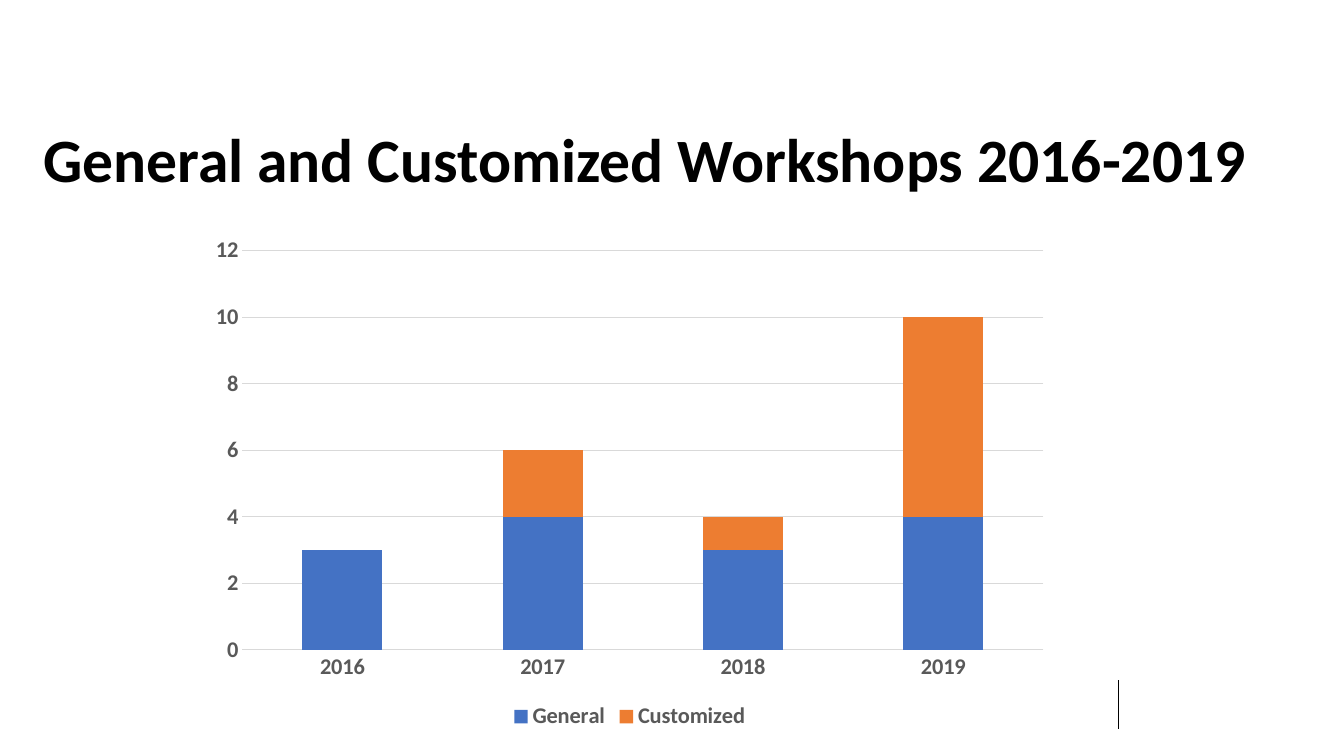
import pptx
import pptx.chart.data
import pptx.dml.color
import pptx.enum.chart
import pptx.enum.shapes
import pptx.enum.text
import pptx.oxml
import pptx.util
from pptx.util import Inches

# Content
TITLE = "General and Customized Workshops 2016-2019"
YEARS = ["2016", "2017", "2018", "2019"]
WORKSHOPS = [("General", (3, 4, 3, 4)), ("Customized", (0, 2, 1, 6))]

COLORS = {
    "background": "FFFFFF",
    "title": "000000",
    "rule": "000000",
    "labels": "595959",
    "grid": "D9D9D9",
    "General": "4472C4",
    "Customized": "ED7D31",
}
TITLE_FONT = {"name": "Calibri", "size": pptx.util.Pt(44), "bold": True}
LABEL_FONT = {"name": "Calibri", "size": pptx.util.Pt(16), "bold": True}

# Layout
TITLE_BOX = {"left": Inches(0.33), "top": Inches(1),
             "width": Inches(12.48), "height": Inches(0.99)}
CHART_BOX = [Inches(value) for value in (1.97, 2.25, 8.55, 5.04)]
RULE_ENDS = [Inches(value) for value in (11.09, 6.75, 11.09, 7.23)]


def color(name):
    return pptx.dml.color.RGBColor.from_string(COLORS[name])


def set_values(target, values):
    for name, value in values.items():
        setattr(target, name, value)


def set_font(font, values, color_name):
    set_values(font, values)
    font.color.rgb = color(color_name)


def add_rule(slide):
    rule = slide.shapes.add_connector(
        pptx.enum.shapes.MSO_CONNECTOR.STRAIGHT, *RULE_ENDS)
    rule.line.width = pptx.util.Pt(0.5)
    rule.line.color.rgb = color("rule")
    properties = rule._element.spPr
    properties.append(pptx.oxml.parse_xml(
        '<a:effectLst xmlns:a='
        '"http://schemas.openxmlformats.org/drawingml/2006/main"/>'))


def add_title(slide):
    title = slide.shapes.title
    set_values(title, TITLE_BOX)
    title.text_frame.text = TITLE
    set_values(title.text_frame, {
        "word_wrap": True,
        "auto_size": pptx.enum.text.MSO_AUTO_SIZE.NONE,
        "vertical_anchor": pptx.enum.text.MSO_ANCHOR.BOTTOM,
    })
    paragraph = title.text_frame.paragraphs[0]
    set_values(paragraph, {
        "alignment": pptx.enum.text.PP_ALIGN.LEFT,
        "line_spacing": 0.9,
    })
    set_font(paragraph.runs[0].font, TITLE_FONT, "title")


def add_workshop_chart(slide):
    data = pptx.chart.data.CategoryChartData()
    data.categories = YEARS
    for name, counts in WORKSHOPS:
        data.add_series(name, counts)
    chart = slide.shapes.add_chart(
        pptx.enum.chart.XL_CHART_TYPE.COLUMN_STACKED, *CHART_BOX, data).chart
    chart.has_title = False
    set_font(chart.font, LABEL_FONT, "labels")

    # Columns
    plot = chart.plots[0]
    set_values(plot, {"gap_width": 150, "overlap": 100,
                      "vary_by_categories": False})
    for series in plot.series:
        series.format.fill.solid()
        series.format.fill.fore_color.rgb = color(series.name)
        series.invert_if_negative = False

    # Axes
    for axis in (chart.category_axis, chart.value_axis):
        set_values(axis, {
            "major_tick_mark": pptx.enum.chart.XL_TICK_MARK.NONE,
            "minor_tick_mark": pptx.enum.chart.XL_TICK_MARK.NONE,
        })
        axis.format.line.fill.background()
        set_font(axis.tick_labels.font, LABEL_FONT, "labels")
    set_values(chart.value_axis, {"minimum_scale": 0, "maximum_scale": 12,
                                  "major_unit": 2, "has_major_gridlines": True})
    grid_line = chart.value_axis.major_gridlines.format.line
    grid_line.width = pptx.util.Pt(0.75)
    grid_line.color.rgb = color("grid")

    # Legend
    chart.has_legend = True
    set_values(chart.legend, {
        "position": pptx.enum.chart.XL_LEGEND_POSITION.BOTTOM,
        "include_in_layout": False,
    })
    set_font(chart.legend.font, LABEL_FONT, "labels")


def main():
    presentation = pptx.Presentation()
    set_values(presentation, {"slide_width": Inches(13.33),
                              "slide_height": Inches(7.5)})
    slide = presentation.slides.add_slide(presentation.slide_layouts[5])
    slide.background.fill.solid()
    slide.background.fill.fore_color.rgb = color("background")
    add_rule(slide)
    add_title(slide)
    add_workshop_chart(slide)
    presentation.save("out.pptx")


if __name__ == "__main__":
    main()
